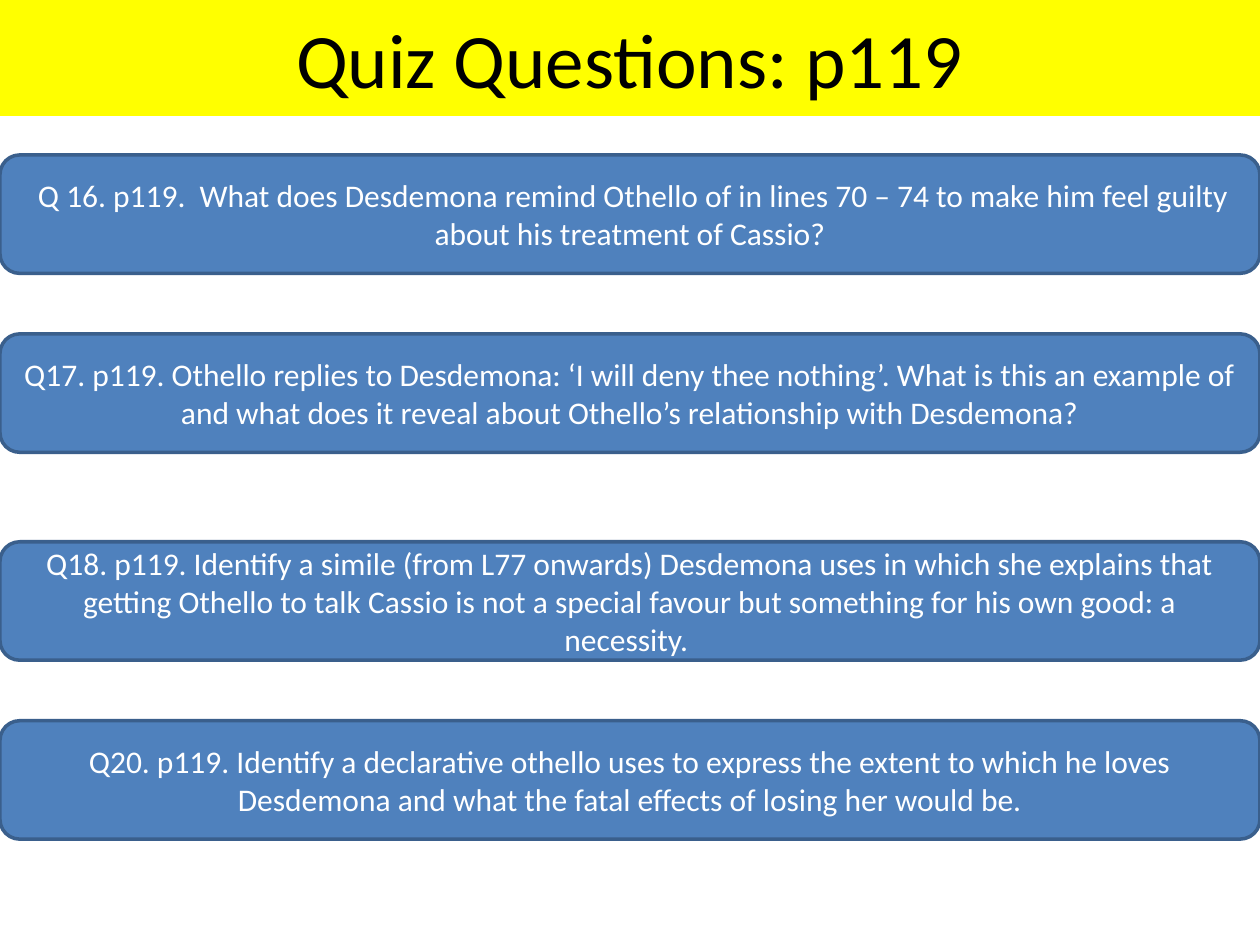
from dataclasses import dataclass

from pptx import Presentation
from pptx import util as u
from pptx.dml.color import RGBColor
from pptx.enum import shapes, text


@dataclass(frozen=True)
class Theme:
    """Colours, font and type sizes of the quiz."""
    font: str = "Calibri"
    title_size: int = 44
    question_size: int = 18
    title_fill: str = "FFFF00"
    title_text: str = "000000"
    box_fill: str = "4F81BD"
    box_line: str = "3A5F8C"
    box_text: str = "FFFFFF"


QUESTIONS = [
    (1.23, " Q 16. p119.  What does Desdemona remind Othello of in lines 70 – 74 "
           "to make him feel guilty about his treatment of Cassio?"),
    (2.65, "Q17. p119. Othello replies to Desdemona: ‘I will deny thee nothing’. "
           "What is this an example of and what does it reveal about Othello’s "
           "relationship with Desdemona?"),
    (4.3, "Q18. p119. Identify a simile (from L77 onwards) Desdemona uses in which "
          "she explains that getting Othello to talk Cassio is not a special favour "
          "but something for his own good: a necessity. "),
    (5.72, "Q20. p119. Identify a declarative othello uses to express the extent to "
           "which he loves Desdemona and what the fatal effects of losing her would be."),
]


def write(tf, content, *, font, size, color):
    """Put centred, wrapped text into a text frame."""
    tf.word_wrap = True
    tf.auto_size = text.MSO_AUTO_SIZE.NONE
    tf.vertical_anchor = text.MSO_ANCHOR.MIDDLE
    p = tf.paragraphs[0]
    p.alignment = text.PP_ALIGN.CENTER
    r = p.add_run()
    r.text = content
    r.font.name = font
    r.font.size = u.Pt(size)
    r.font.color.rgb = RGBColor.from_string(color)


class QuizSlide:
    """Draws quiz elements on one slide in one style."""

    def __init__(self, prs, theme):
        """Add a title-only slide."""
        self.theme = theme
        self.width = prs.slide_width
        self.s = prs.slides.add_slide(prs.slide_layouts[5])

    def fill(self, sp, color):
        """Give a shape a solid fill."""
        sp.fill.solid()
        sp.fill.fore_color.rgb = RGBColor.from_string(color)

    def title(self, content):
        """Set the title as a full-width banner."""
        t, sp = self.theme, self.s.shapes.title
        sp.left, sp.top, sp.width, sp.height = 0, 0, self.width, u.Inches(0.92)
        self.fill(sp, t.title_fill)
        write(sp.text_frame, content, font=t.font, size=t.title_size, color=t.title_text)

    def question(self, top, content):
        """Add a full-width rounded question box."""
        t = self.theme
        sp = self.s.shapes.add_shape(shapes.MSO_SHAPE.ROUNDED_RECTANGLE,
                                     0, u.Inches(top), self.width, u.Inches(0.94))
        sp.shadow.inherit = False
        self.fill(sp, t.box_fill)
        sp.line.color.rgb = RGBColor.from_string(t.box_line)
        sp.line.width = u.Pt(2)
        write(sp.text_frame, content, font=t.font, size=t.question_size, color=t.box_text)


def main():
    """Build the quiz slide and save it."""
    prs = Presentation()
    prs.slide_width, prs.slide_height = u.Inches(10), u.Inches(7.5)
    quiz = QuizSlide(prs, Theme())
    quiz.title("Quiz Questions: p119")
    for top, content in QUESTIONS:
        quiz.question(top, content)
    prs.save("out.pptx")


if __name__ == "__main__":
    main()
